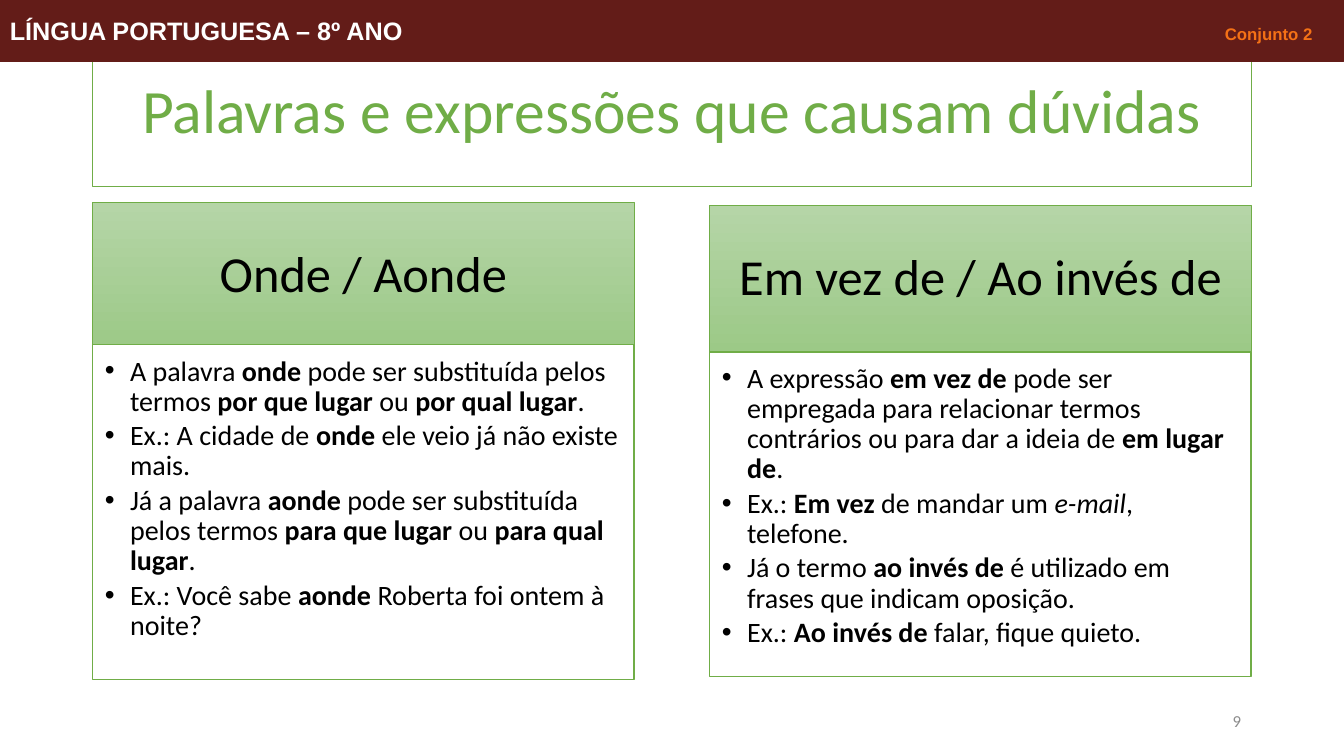
from pptx import Presentation
from pptx.dml.color import RGBColor
from pptx.enum.shapes import MSO_SHAPE
from pptx.enum.text import MSO_ANCHOR, PP_ALIGN
from pptx.util import Inches, Pt
from lxml.etree import SubElement
from pptx.oxml.ns import qn

COLORS = {
    "green": "70AD47", "gradient_top": "B5D5A7", "gradient_bottom": "9CC987",
    "white": "FFFFFF", "black": "000000", "gray": "8C8C8C",
    "maroon": "631C18", "orange": "F47116",
}
WIDTH, HEIGHT = 13.33, 7.5
MARGIN, COLUMN_WIDTH = 0.92, 5.37
CONTENT_WIDTH = WIDTH - 2 * MARGIN

presentation = Presentation()
presentation.slide_width, presentation.slide_height = Inches(WIDTH), Inches(HEIGHT)
slide = presentation.slides.add_slide(presentation.slide_layouts[6])


def add_box(left, top, width, height, fill=None, line=None, line_width=1,
            anchor=MSO_ANCHOR.MIDDLE, insets=(0.1, 0.05, 0.1, 0.05)):
    """Add a rectangle; two fill colours make a vertical gradient."""
    shape = slide.shapes.add_shape(MSO_SHAPE.RECTANGLE, *map(Inches, (left, top, width, height)))
    shape.shadow.inherit = False
    if fill is None:
        shape.fill.background()
    elif isinstance(fill, tuple):
        shape.fill.gradient()
        shape.fill.gradient_angle = 270
        for stop, color in zip(shape.fill.gradient_stops, fill):
            stop.color.rgb = RGBColor.from_string(COLORS[color])
    else:
        shape.fill.solid()
        shape.fill.fore_color.rgb = RGBColor.from_string(COLORS[fill])
    if line:
        shape.line.color.rgb = RGBColor.from_string(COLORS[line])
        shape.line.width = Pt(line_width)
    else:
        shape.line.fill.background()
    frame = shape.text_frame
    frame.word_wrap = True
    frame.vertical_anchor = anchor
    frame.margin_left, frame.margin_top, frame.margin_right, frame.margin_bottom = map(Inches, insets)
    return frame


def write(paragraph, text, size, color="black", font="Calibri", bold=False,
          align=PP_ALIGN.LEFT, line_spacing=0.9, space_after=0):
    """Add text to a paragraph: *stars* switch bold and _underscores_ italic."""
    paragraph.alignment = align
    paragraph.line_spacing = line_spacing
    paragraph.space_after = Pt(space_after)
    for star, part in enumerate(text.split("*")):
        for underscore, piece in enumerate(part.split("_")):
            if piece:
                run = paragraph.add_run()
                run.text = piece
                run.font.name, run.font.size = font, Pt(size)
                run.font.bold = bold or star % 2 == 1
                run.font.italic = underscore % 2 == 1
                run.font.color.rgb = RGBColor.from_string(COLORS[color])


# Title
title = add_box(MARGIN, 0.4, CONTENT_WIDTH, 1.45, fill="white", line="green")
write(title.paragraphs[0], "Palavras e expressões que causam dúvidas", size=44,
      color="green", align=PP_ALIGN.CENTER)

# Two columns: heading, heading top, body top, body height, bullets
columns = [
    ("Onde / Aonde", 2.01, 3.42, 3.32, [
        "A palavra *onde* pode ser substituída pelos termos *por que lugar* ou *por qual lugar*.",
        "Ex.: A cidade de *onde* ele veio já não existe mais.",
        "Já a palavra *aonde* pode ser substituída pelos termos *para que lugar *ou *para qual lugar*.",
        "Ex.: Você sabe *aonde* Roberta foi ontem à noite?",
    ]),
    ("Em vez de / Ao invés de", 2.04, 3.49, 3.22, [
        "A expressão *em vez de *pode ser empregada para relacionar termos contrários "
        "ou para dar a ideia de *em lugar de*.",
        "Ex.: *Em vez *de mandar um _e-mail_, telefone.",
        "Já o termo *ao invés de *é utilizado em frases que indicam oposição.",
        "Ex.: *Ao invés de *falar, fique quieto.",
    ]),
]
for index, (heading, heading_top, body_top, body_height, bullets) in enumerate(columns):
    left = MARGIN + index * (CONTENT_WIDTH - COLUMN_WIDTH)
    header = add_box(left, heading_top, COLUMN_WIDTH, 1.45, line="green", line_width=0.5,
                     fill=("gradient_top", "gradient_bottom"), insets=(0.28, 0.16, 0.28, 0.16))
    write(header.paragraphs[0], heading, size=36, align=PP_ALIGN.CENTER)

    body = add_box(left, body_top, COLUMN_WIDTH, body_height, fill="white", line="green",
                   anchor=MSO_ANCHOR.TOP, insets=(0.12, 0.12, 0.16, 0.17))
    for number, bullet in enumerate(bullets):
        paragraph = body.add_paragraph() if number else body.paragraphs[0]
        write(paragraph, bullet, size=20, space_after=3)
        properties = paragraph._p.get_or_add_pPr()
        properties.set("marL", str(Inches(0.25)))
        properties.set("indent", str(-Inches(0.25)))
        SubElement(properties, qn("a:buFont"), typeface="Arial")
        SubElement(properties, qn("a:buChar"), char="•")

# Slide number
page_number = add_box(WIDTH - MARGIN - 3, 6.95, 3, 0.4)
write(page_number.paragraphs[0], "9", size=12, color="gray", align=PP_ALIGN.RIGHT, line_spacing=1.0)

# Top banner, with a tab stop for the set label
banner = add_box(0, 0, WIDTH, 0.61, fill="maroon", line="maroon", line_width=0.75)
paragraph = banner.paragraphs[0]
write(paragraph, "LÍNGUA PORTUGUESA – 8º ANO\t", size=18, color="white", font="Arial",
      bold=True, line_spacing=1.0)
write(paragraph, "Conjunto 2", size=12, color="orange", font="Arial", bold=True, line_spacing=1.0)
tab_stops = SubElement(paragraph._p.get_or_add_pPr(), qn("a:tabLst"))
SubElement(tab_stops, qn("a:tab"), pos=str(Inches(12.05)), algn="l")

presentation.save("out.pptx")
